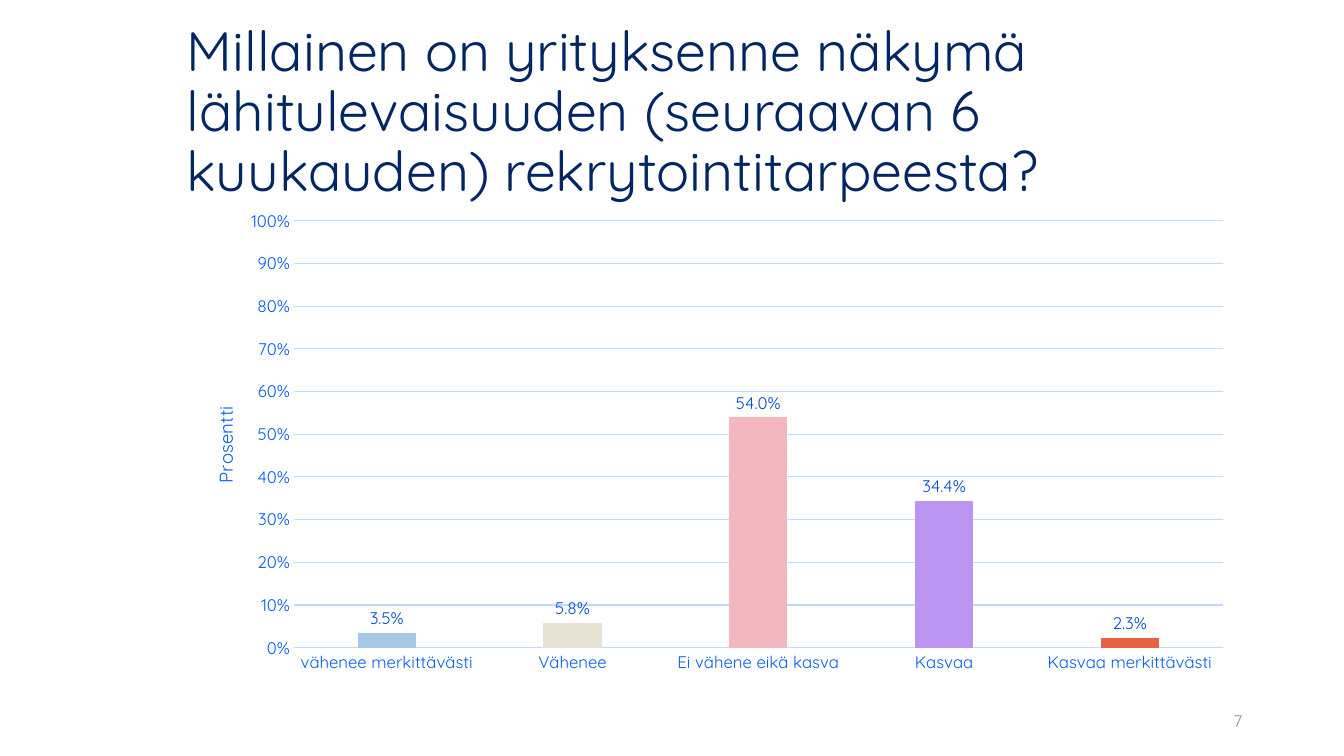
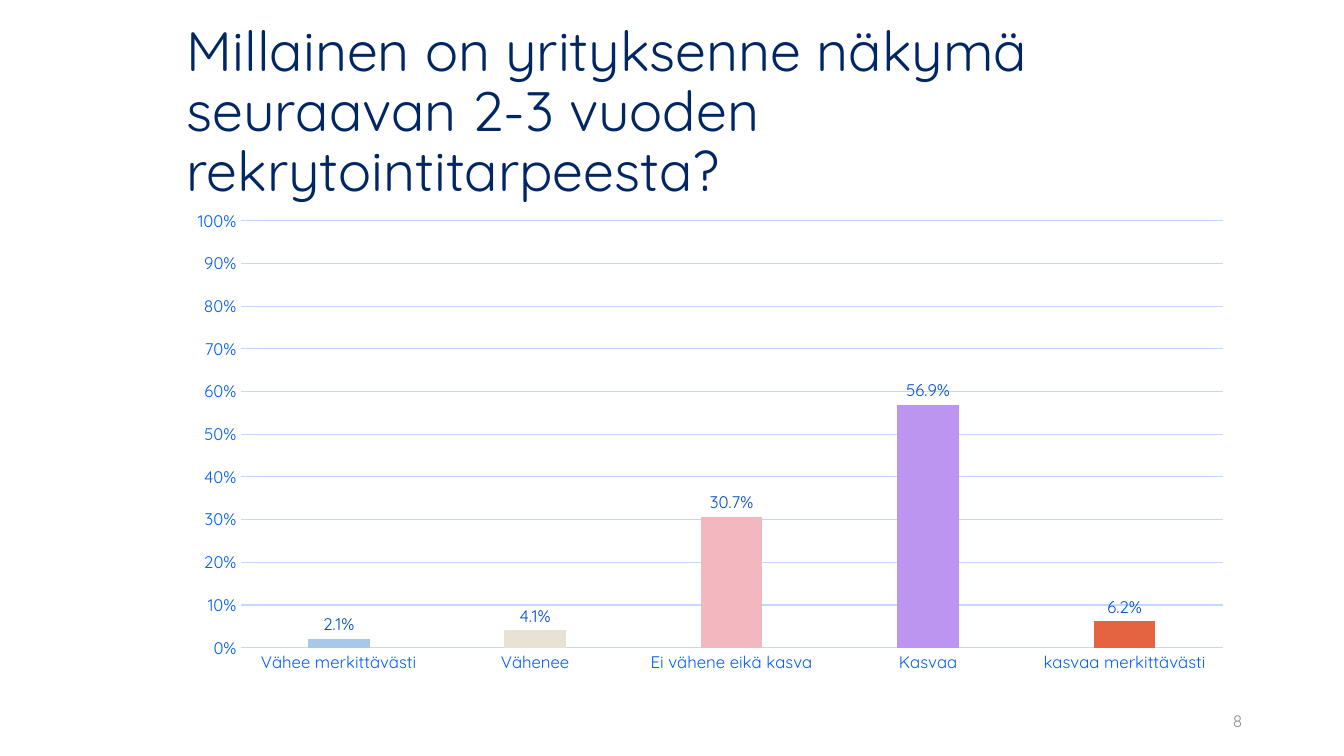
import pptx
import pptx.chart.data
import pptx.dml.color
import pptx.enum.chart
import pptx.enum.text
import pptx.oxml
import pptx.oxml.ns
import pptx.util

# Content
FONT = "Quicksand"
NAVY, BLUE, LABEL, GRID, GREY = "002663", "005DF3", "004DCA", "C1D9FF", "8C8E9F"
BARS = ["A5C9E7", "E8E2D5", "F2B7BF", "BB95EF", "E66342"]

SLIDES = [
    {
        "page": 7,
        "title": "Millainen on yrityksenne näkymä lähitulevaisuuden "
                 "(seuraavan 6 kuukauden) rekrytointitarpeesta?",
        "axis": "Prosentti",
        "left": 0.11,
        "data": [("vähenee merkittävästi", 0.035), ("Vähenee", 0.058),
                 ("Ei vähene eikä kasva", 0.54), ("Kasvaa", 0.344),
                 ("Kasvaa merkittävästi", 0.023)],
    },
    {
        "page": 8,
        "title": "Millainen on yrityksenne näkymä seuraavan 2-3 vuoden "
                 "rekrytointitarpeesta?",
        "axis": None,
        "left": 0.06,
        "data": [("Vähee merkittävästi", 0.021), ("Vähenee", 0.041),
                 ("Ei vähene eikä kasva", 0.307), ("Kasvaa", 0.569),
                 ("kasvaa merkittävästi", 0.062)],
    },
]

# Places in px, 100 to the inch
PX = 9144
SIZE = (1333, 750)
TITLE = (175, 40, 1059, 145)
CHART = (175, 200, 1059, 476)
PAGE = (942, 695, 300, 40)


def emu(box):
    return [n * PX for n in box]


def rgb(code):
    return pptx.dml.color.RGBColor.from_string(code)


def style(font, size, color):
    for key, val in {"name": FONT, "size": pptx.util.Pt(size), "bold": False}.items():
        setattr(font, key, val)
    font.color.rgb = rgb(color)


def write(shape, text, size, color, align):
    frame = shape.text_frame
    frame.word_wrap = True
    frame.vertical_anchor = pptx.enum.text.MSO_ANCHOR.MIDDLE
    para = frame.paragraphs[0]
    para.text = text
    para.alignment = align
    style(para.runs[0].font, size, color)
    return para


def place(node, index, **parts):
    """Give a chart part a manual place, in fractions of the chart."""
    old = node.find(pptx.oxml.ns.qn("c:layout"))
    if old is not None:
        node.remove(old)
    inner = '<c:layoutTarget val="inner"/>' if "w" in parts else ""
    modes = '<c:xMode val="edge"/><c:yMode val="edge"/>'
    sizes = "".join(f'<c:{k} val="{v:.2f}"/>' for k, v in parts.items())
    node.insert(index, pptx.oxml.parse_xml(
        f'<c:layout {pptx.oxml.ns.nsdecls("c")}><c:manualLayout>'
        f'{inner}{modes}{sizes}</c:manualLayout></c:layout>'))


def line(fmt):
    fmt.line.color.rgb = rgb(GRID)
    fmt.line.width = pptx.util.Pt(0.75)


def draw(slide, item):
    data = pptx.chart.data.CategoryChartData()
    data.categories = [name for name, _ in item["data"]]
    data.add_series("Series 1", [val for _, val in item["data"]])
    kind = pptx.enum.chart.XL_CHART_TYPE.COLUMN_CLUSTERED
    chart = slide.shapes.add_chart(kind, *emu(CHART), data).chart
    chart.has_legend = chart.has_title = False
    style(chart.font, 10, NAVY)

    # Axes
    cat, val = chart.category_axis, chart.value_axis
    for axis in (cat, val):
        axis.major_tick_mark = axis.minor_tick_mark = pptx.enum.chart.XL_TICK_MARK.NONE
        style(axis.tick_labels.font, 12, BLUE)
    line(cat.format)
    val.format.line.fill.background()
    for key, num in {"minimum_scale": 0, "maximum_scale": 1, "major_unit": 0.1,
                     "has_major_gridlines": True}.items():
        setattr(val, key, num)
    line(val.major_gridlines.format)
    val.tick_labels.number_format = "0%"
    val.tick_labels.number_format_is_linked = False
    if item["axis"]:
        frame = val.axis_title.text_frame
        frame.text = item["axis"]
        style(frame.paragraphs[0].runs[0].font, 13.3, BLUE)
        body = val.axis_title._element.find(".//" + pptx.oxml.ns.qn("a:bodyPr"))
        body.set("rot", "-5400000")
        body.set("vert", "horz")
        place(val.axis_title._element, 1, x=0.03, y=0.42)

    # Bars and their labels
    plot = chart.plots[0]
    for key, num in {"gap_width": 219, "overlap": -27, "vary_by_categories": False,
                     "has_data_labels": True}.items():
        setattr(plot, key, num)
    for i, color in enumerate(BARS):
        fill = plot.series[0].points[i].format.fill
        fill.solid()
        fill.fore_color.rgb = rgb(color)
    marks = plot.data_labels
    for key, num in {"show_value": True, "number_format": "0.0%",
                     "number_format_is_linked": False,
                     "position": pptx.enum.chart.XL_LABEL_POSITION.OUTSIDE_END}.items():
        setattr(marks, key, num)
    style(marks.font, 12, LABEL)

    area = chart._chartSpace.find(".//" + pptx.oxml.ns.qn("c:plotArea"))
    place(area, 0, x=item["left"], y=0.04, w=0.98 - item["left"], h=0.89)


def main():
    deck = pptx.Presentation()
    deck.slide_width, deck.slide_height = emu(SIZE)
    align = pptx.enum.text.PP_ALIGN
    for item in SLIDES:
        slide = deck.slides.add_slide(deck.slide_layouts[5])
        title = slide.shapes.title
        title.left, title.top, title.width, title.height = emu(TITLE)
        write(title, item["title"], 39.6, NAVY, align.LEFT).line_spacing = 0.9
        page = slide.shapes.add_textbox(*emu(PAGE))
        write(page, str(item["page"]), 12, GREY, align.RIGHT)
        draw(slide, item)
    deck.save("out.pptx")


if __name__ == "__main__":
    main()
